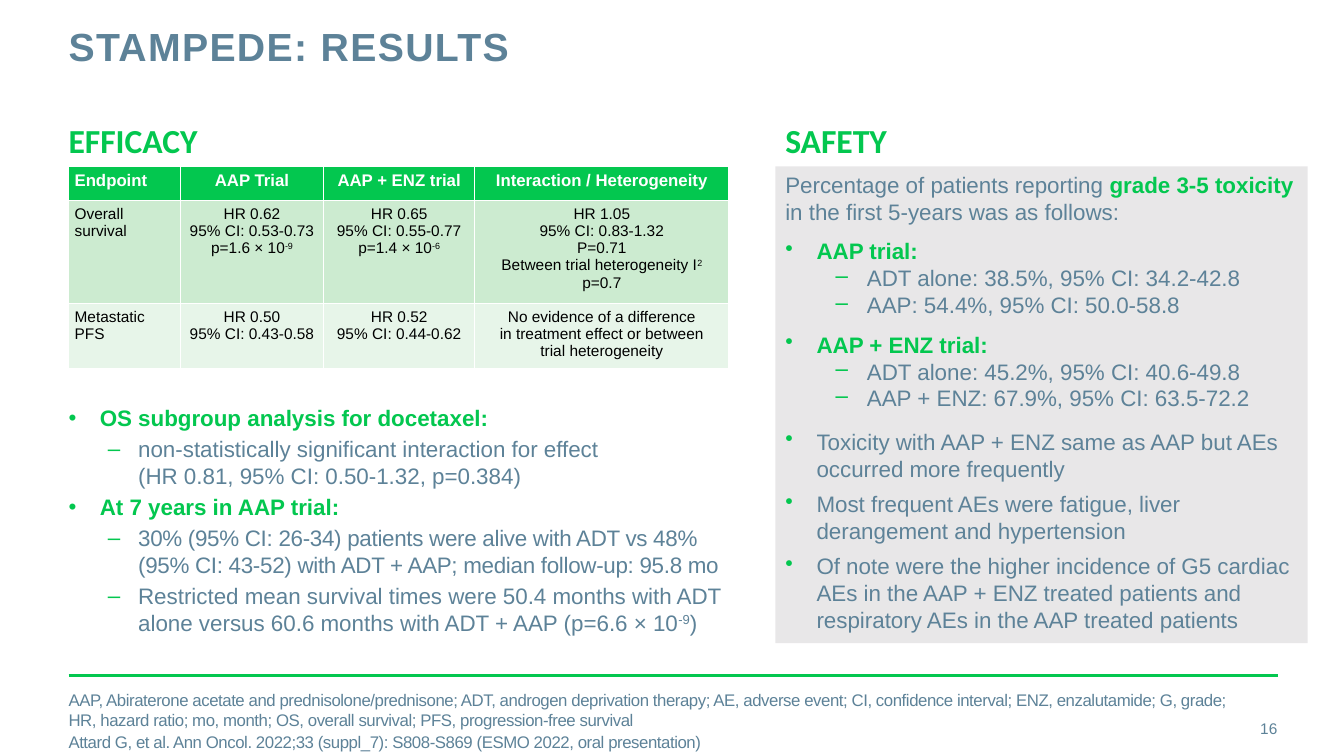
from lxml.etree import SubElement
from pptx import Presentation
from pptx.dml.color import RGBColor
from pptx.enum.shapes import MSO_CONNECTOR, MSO_SHAPE
from pptx.enum.text import MSO_ANCHOR, MSO_AUTO_SIZE, PP_ALIGN
from pptx.oxml.ns import qn
from pptx.util import Inches, Pt

GREEN, SLATE = "03C74F", "5D8298"


def color(value):
    return RGBColor.from_string(value)


def write(para, text, size, shade, bold=False, face="Arial", bullet=None,
          indents=(0, 0), before=0, after=0, tracking=0):
    para.space_before, para.space_after = Pt(before), Pt(after)
    properties = para._p.get_or_add_pPr()
    properties.set("marL", str(Inches(indents[0])))
    properties.set("indent", str(Inches(indents[1])))
    if bullet:
        bullet_color = SubElement(properties, qn("a:buClr"))
        SubElement(bullet_color, qn("a:srgbClr")).set("val", GREEN)
        SubElement(properties, qn("a:buChar")).set("char", bullet)
    else:
        SubElement(properties, qn("a:buNone"))
    para.font.name, para.font.size, para.font.bold = face, Pt(size), bold
    para.font.color.rgb = color(shade)
    for number, line in enumerate(text.split("\n")):
        if number:
            para.add_line_break()
        for part in line.split("|"):
            span = para.add_run()
            span.text = part.lstrip("^*")
            if part.startswith("^"):
                span._r.get_or_add_rPr().set("baseline", "30000")
            if part.startswith("*"):
                span.font.bold = True
                span.font.color.rgb = color(GREEN)
            if tracking:
                span._r.get_or_add_rPr().set("spc", str(tracking))


deck = Presentation()
deck.slide_width, deck.slide_height = Inches(13.33), Inches(7.5)
page = deck.slides.add_slide(deck.slide_layouts[3])
title, findings, footnote = page.placeholders

safety = page.shapes.add_shape(MSO_SHAPE.RECTANGLE, Inches(7.69), Inches(1.65), Inches(5.28), Inches(4.73))
safety.shadow.inherit = False
safety.fill.solid()
safety.fill.fore_color.rgb = color("E8E7E8")
safety.line.fill.background()
page_number = page.shapes.add_textbox(Inches(11.81), Inches(7.03), Inches(0.86), Inches(0.4))

for box, place, insets, anchor in [
    (title, (0.68, 0.27, 9.56, 0.88), (0, 0, 0), MSO_ANCHOR.TOP),
    (findings, (0.68, 3.96, 6.7, 2.42), (0, 0.1, 0.05), MSO_ANCHOR.TOP),
    (footnote, (0.68, 6.95, 11.58, 0.4), (0, 0, 0), MSO_ANCHOR.MIDDLE),
    (safety, (7.69, 1.65, 5.28, 4.73), (0.1, 0.1, 0.05), MSO_ANCHOR.TOP),
    (page_number, (11.81, 7.03, 0.86, 0.4), (0, 0, 0), MSO_ANCHOR.MIDDLE),
]:
    box.left, box.top, box.width, box.height = map(Inches, place)
    frame = box.text_frame
    frame.word_wrap, frame.auto_size = True, MSO_AUTO_SIZE.NONE
    frame.vertical_anchor = anchor
    frame.margin_left, frame.margin_right = Inches(insets[0]), Inches(insets[1])
    frame.margin_top = frame.margin_bottom = Inches(insets[2])

heading = title.text_frame.paragraphs[0]
heading.alignment, heading.line_spacing = PP_ALIGN.LEFT, Pt(30)
write(heading, "STAMPEDE: RESULTS", 28, SLATE, bold=True, tracking=100)
number_para = page_number.text_frame.paragraphs[0]
number_para.alignment = PP_ALIGN.RIGHT
write(number_para, "16", 11, SLATE)

for label, left, width, inset in [("EFFICACY", 0.68, 1.44, 0), ("SAFETY", 7.69, 1.22, 0.1)]:
    box = page.shapes.add_textbox(Inches(left), Inches(1.14), Inches(width), Inches(0.5))
    box.text_frame.word_wrap = False
    box.text_frame.margin_left = Inches(inset)
    write(box.text_frame.paragraphs[0], label, 24, GREEN, bold=True, face="Calibri")

rows = [
    ["Endpoint", "AAP Trial", "AAP + ENZ trial", "Interaction / Heterogeneity"],
    ["Overall survival",
     "HR 0.62\n95% CI: 0.53-0.73\np=1.6 × 10|^-9",
     "HR 0.65\n95% CI: 0.55-0.77\np=1.4 × 10|^-6",
     "HR 1.05\n95% CI: 0.83-1.32\nP=0.71\nBetween trial heterogeneity I|^2| p=0.7"],
    ["Metastatic PFS",
     "HR 0.50\n95% CI: 0.43-0.58",
     "HR 0.52\n95% CI: 0.44-0.62",
     "No evidence of a difference\nin treatment effect or between\ntrial heterogeneity"],
]
row_styles = [(0.34, GREEN, 12, "FFFFFF"), (0.95, "CCEBD0", 11, "000000"), (0.61, "E7F5E9", 11, "000000")]
table = page.shapes.add_table(3, 4, Inches(0.68), Inches(1.65), Inches(6.55), Inches(1.9)).table
for column, width in zip(table.columns, [1.11, 1.42, 1.5, 2.52]):
    column.width = Inches(width)
for row, texts, (height, fill, size, shade) in zip(table.rows, rows, row_styles):
    row.height = Inches(height)
    for index, (cell, text) in enumerate(zip(row.cells, texts)):
        cell.fill.solid()
        cell.fill.fore_color.rgb = color(fill)
        cell.margin_left = cell.margin_right = Inches(0.06)
        cell.margin_top = cell.margin_bottom = Inches(0.05)
        for position, line in enumerate(text.split("\n")):
            para = cell.text_frame.add_paragraph() if position else cell.text_frame.paragraphs[0]
            para.alignment = PP_ALIGN.CENTER if index else PP_ALIGN.LEFT
            write(para, line, size, shade, bold=fill == GREEN)

finding_items = [
    (0, "*OS subgroup analysis for docetaxel:", 0, 3, 0),
    (1, "non-statistically significant interaction for effect\n(HR 0.81, 95% CI: 0.50-1.32, p=0.384)", 0, 3, 0),
    (0, "*At 7 years in AAP trial:", 0, 3, 0),
    (1, "30% (95% CI: 26-34) patients were alive with ADT vs 48% "
        "(95% CI: 43-52) with ADT + AAP; median follow-up: 95.8 mo", 0, 3, -20),
    (1, "Restricted mean survival times were 50.4 months with ADT "
        "alone versus 60.6 months with ADT + AAP (p=6.6 × 10|^-9|)", 0, 3, 0),
]
safety_items = [
    (None, "Percentage of patients reporting |*grade 3-5 toxicity |in the first 5-years was as follows:", 0, 0, 0),
    (0, "*AAP trial:", 9, 0, 0),
    (1, "ADT alone: 38.5%, 95% CI: 34.2-42.8", 0, 0, 0),
    (1, "AAP: 54.4%, 95% CI: 50.0-58.8", 0, 0, 0),
    (0, "*AAP + ENZ trial:", 9, 0, 0),
    (1, "ADT alone: 45.2%, 95% CI: 40.6-49.8", 0, 0, 0),
    (1, "AAP + ENZ: 67.9%, 95% CI: 63.5-72.2", 0, 6, 0),
    (0, "Toxicity with AAP + ENZ same as AAP but AEs occurred more frequently", 6, 6, 0),
    (0, "Most frequent AEs were fatigue, liver derangement and hypertension", 0, 6, 0),
    (0, "Of note were the higher incidence of G5 cardiac AEs in the AAP + ENZ "
        "treated patients and respiratory AEs in the AAP treated patients", 0, 0, 0),
]
for box, items, sub_indents in [(findings, finding_items, (0.69, -0.3)), (safety, safety_items, (0.81, -0.31))]:
    styles = {None: (None, (0, 0)), 0: ("•", (0.31, -0.31)), 1: ("–", sub_indents)}
    for position, (level, text, before, after, tracking) in enumerate(items):
        para = box.text_frame.add_paragraph() if position else box.text_frame.paragraphs[0]
        para.alignment, para.level = PP_ALIGN.LEFT, level or 0
        bullet, indents = styles[level]
        write(para, text, 16, SLATE, bullet=bullet, indents=indents,
              before=before, after=after, tracking=tracking)

abbreviations = footnote.text_frame.paragraphs[0]
write(abbreviations, "AAP, Abiraterone acetate and prednisolone/prednisone; ADT, androgen deprivation therapy; "
      "AE, adverse event; CI, confidence interval; ENZ, enzalutamide; G, grade; HR, hazard ratio; mo, month; "
      "OS, overall survival; PFS, progression-free survival", 12, SLATE, tracking=-30)
citation = footnote.text_frame.add_paragraph()
citation.line_spacing = 0.9
write(citation, "Attard G, et al. Ann Oncol. 2022;33 (suppl_7): S808-S869 (ESMO 2022, oral presentation)",
      12, SLATE, before=3, tracking=-30)

rule = page.shapes.add_connector(MSO_CONNECTOR.STRAIGHT, Inches(0.68), Inches(6.7), Inches(12.68), Inches(6.7))
rule.line.color.rgb, rule.line.width = color(GREEN), Pt(2)
SubElement(rule._element.spPr, qn("a:effectLst"))

deck.save("out.pptx")
